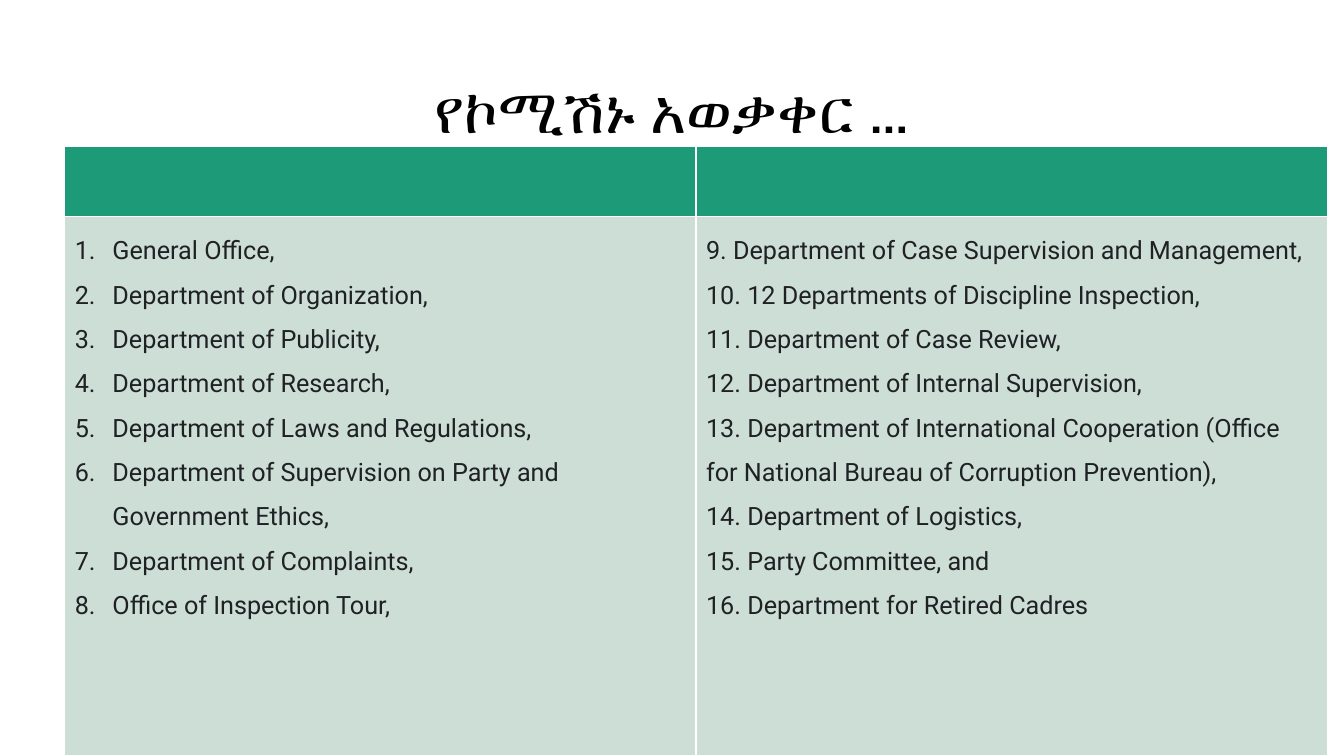
from dataclasses import dataclass

from lxml.etree import SubElement
from pptx import Presentation
from pptx.dml.color import RGBColor
from pptx.enum.text import MSO_ANCHOR, PP_ALIGN
from pptx.oxml.ns import qn
from pptx.util import Cm, Pt


@dataclass(frozen=True)
class Theme:
    ink: str = "000000"
    text: str = "202124"
    head: str = "1D9A78"
    body: str = "CDDED6"
    rule: str = "FFFFFF"
    title_font: str = "Calibri"
    text_font: str = "Roboto"
    title_size: int = 44
    text_size: int = 18


THEME = Theme()

LEFT = [
    "General Office,",
    "Department of Organization,",
    "Department of Publicity,",
    "Department of Research,",
    "Department of Laws and Regulations,",
    "Department of Supervision on Party and Government Ethics,",
    "Department of Complaints,",
    "Office of Inspection Tour,",
]
RIGHT = [
    "9. Department of Case Supervision and Management,",
    "10. 12 Departments of Discipline Inspection,",
    "11. Department of Case Review,",
    "12. Department of Internal Supervision,",
    "13. Department of International Cooperation "
    "(Office for National Bureau of Corruption Prevention),",
    "14. Department of Logistics,",
    "15. Party Committee, and",
    "16. Department for Retired Cadres",
]


def set_font(para, name, size, color):
    para.font.name = name
    para.font.size = Pt(size)
    para.font.color.rgb = RGBColor.from_string(color)


def add_title(slide, text):
    title = slide.shapes.title
    title.left, title.top = Cm(2.34), Cm(1.02)
    title.width, title.height = Cm(29.21), Cm(3.68)
    frame = title.text_frame
    frame.text = text
    frame.vertical_anchor = MSO_ANCHOR.MIDDLE
    para = frame.paragraphs[0]
    para.alignment = PP_ALIGN.CENTER
    para.line_spacing = 0.9
    set_font(para, THEME.title_font, THEME.title_size, THEME.ink)


def style_cell(cell, color, base):
    props = cell._tc.get_or_add_tcPr()
    for side, width in (("L", 1), ("R", 1), ("T", 1), ("B", base)):
        line = SubElement(props, qn(f"a:ln{side}"), w=str(Pt(width)))
        fill = SubElement(line, qn("a:solidFill"))
        SubElement(fill, qn("a:srgbClr"), val=THEME.rule)
    cell.fill.solid()
    cell.fill.fore_color.rgb = RGBColor.from_string(color)


def number(para):
    props = para._p.get_or_add_pPr()
    indent = Cm(0.95)
    props.set("marL", str(indent))
    props.set("indent", str(-indent))
    SubElement(props, qn("a:buFont"), typeface="+mj-lt")
    SubElement(props, qn("a:buAutoNum"), type="arabicPeriod")


def fill_list(cell, items, auto):
    frame = cell.text_frame
    frame.text = "\n".join(items)
    for para in frame.paragraphs:
        if auto:
            number(para)
        para.line_spacing = 1.5
        set_font(para, THEME.text_font, THEME.text_size, THEME.text)


def add_lists(slide):
    frame = slide.shapes.add_table(2, 2, Cm(1.63), Cm(3.68), Cm(31.82), Cm(15.37))
    table = frame.table
    table.rows[0].height, table.rows[1].height = Cm(1.78), Cm(13.59)
    for col, (items, auto) in enumerate(((LEFT, True), (RIGHT, False))):
        style_cell(table.cell(0, col), THEME.head, 1)
        style_cell(table.cell(1, col), THEME.body, 1)
        fill_list(table.cell(1, col), items, auto)


def main():
    deck = Presentation()
    deck.slide_width, deck.slide_height = Cm(33.87), Cm(19.05)
    slide = deck.slides.add_slide(deck.slide_layouts.get_by_name("Title Only"))
    add_title(slide, "የኮሚሽኑ አወቃቀር …")
    add_lists(slide)
    deck.save("out.pptx")


if __name__ == "__main__":
    main()
